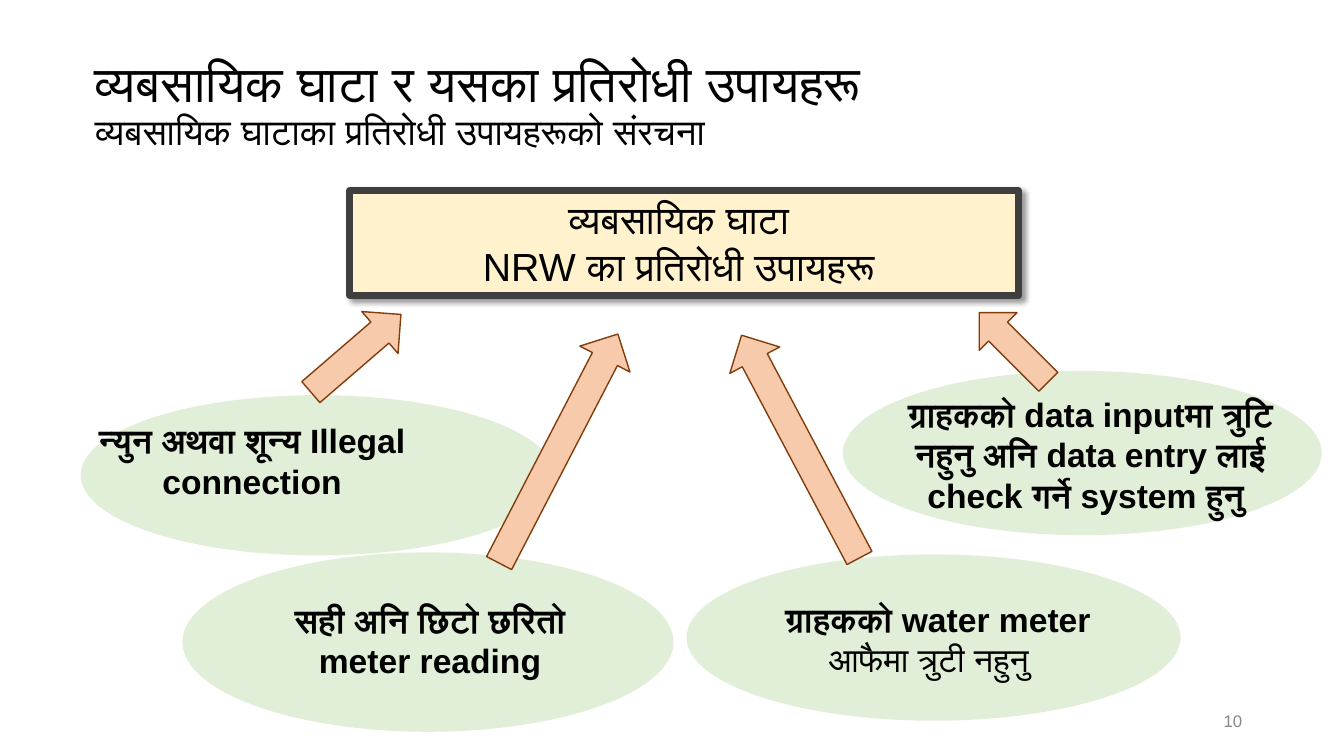
from dataclasses import dataclass
from typing import Any

import lxml.etree
import pptx
import pptx.dml.color
import pptx.enum.shapes
import pptx.enum.text
import pptx.oxml.ns
import pptx.util

Inches = pptx.util.Inches
Pt = pptx.util.Pt
RGBColor = pptx.dml.color.RGBColor
Shapes = pptx.enum.shapes.MSO_SHAPE
Align = pptx.enum.text.PP_ALIGN
Anchor = pptx.enum.text.MSO_ANCHOR
AutoSize = pptx.enum.text.MSO_AUTO_SIZE
qn = pptx.oxml.ns.qn

BLACK = RGBColor(0x00, 0x00, 0x00)
GREY = RGBColor(0x88, 0x88, 0x88)
GREEN = RGBColor(0xE1, 0xEF, 0xD8)
CREAM = RGBColor(0xFF, 0xF2, 0xCC)
CHARCOAL = RGBColor(0x3F, 0x3F, 0x3F)
PEACH = RGBColor(0xF7, 0xCA, 0xAC)
BROWN = RGBColor(0x83, 0x3C, 0x0B)
FONT = "Arial"

Box = tuple[float, float, float, float]


@dataclass(frozen=True)
class Line:
    text: str
    bold: bool = False


@dataclass(frozen=True)
class Measure:
    ellipse: Box
    label: Box
    lines: tuple[Line, ...]


@dataclass(frozen=True)
class Arrow:
    box: Box
    rotation: float


MEASURES = (
    Measure((6.81, 5.5, 4.9, 1.65), (7.11, 5.89, 4.29, 0.91),
            (Line(" ग्राहकको water meter", True), Line("आफैमा त्रुटी नहुनु "))),
    Measure((1.81, 5.48, 4.87, 1.78), (2.35, 5.9, 3.83, 0.91),
            (Line("सही अनि छिटो छरितो meter reading", True),)),
    Measure((0.8, 3.92, 4.7, 1.59), (0.65, 4.12, 3.7, 0.91),
            (Line("न्युन अथवा शून्य Illegal connection", True),)),
    Measure((8.36, 3.68, 4.75, 1.63), (8.76, 3.86, 4.11, 1.31),
            (Line("ग्राहकको data inputमा त्रुटि नहुनु अनि data entry लाई "
                  "check गर्ने system हुनु ", True),)),
)

ARROWS = (
    Arrow((2.94, 3.23, 1.18, 0.55), 319.2),
    Arrow((9.57, 3.18, 0.97, 0.53), 225),
    Arrow((4.26, 4.17, 2.56, 0.56), 297.4),
    Arrow((6.69, 4.15, 2.5, 0.56), 242.1),
)


def apply(target: Any, values: dict[str, Any]) -> None:
    for key, value in values.items():
        setattr(target, key, value)


def place(box: Box) -> list[int]:
    return [Inches(length) for length in box]


def style_run(run: Any, size: float, color: RGBColor = BLACK, bold: bool = False) -> None:
    apply(run.font, {"name": FONT, "size": Pt(size), "bold": bold})
    run.font.color.rgb = color
    complex_script = lxml.etree.SubElement(run.font._element, qn("a:cs"))
    complex_script.set("typeface", FONT)


def write(frame: Any, lines: tuple[Line, ...], size: float, color: RGBColor = BLACK,
          alignment: Any = Align.CENTER, anchor: Any = Anchor.TOP,
          auto_size: Any = AutoSize.SHAPE_TO_FIT_TEXT) -> None:
    apply(frame, {"word_wrap": True, "vertical_anchor": anchor, "auto_size": auto_size})
    for index, line in enumerate(lines):
        paragraph = frame.add_paragraph() if index else frame.paragraphs[0]
        paragraph.alignment = alignment
        run = paragraph.add_run()
        run.text = line.text
        style_run(run, size, color, line.bold)


def draw(slide: Any, kind: Any, box: Box, fill: RGBColor,
         line: RGBColor | None = None, width: float = 1) -> Any:
    shape = slide.shapes.add_shape(kind, *place(box))
    shape.shadow.inherit = False
    shape.fill.solid()
    shape.fill.fore_color.rgb = fill
    if line is None:
        shape.line.fill.background()
    else:
        shape.line.color.rgb = line
        shape.line.width = Pt(width)
    return shape


def add_title(slide: Any) -> None:
    title = slide.shapes.title
    apply(title, dict(zip(("left", "top", "width", "height"),
                          place((0.84, 0.26, 12.03, 1.59)))))
    apply(title.text_frame, {"word_wrap": True, "vertical_anchor": Anchor.MIDDLE,
                             "auto_size": AutoSize.NONE})
    paragraph = title.text_frame.paragraphs[0]
    apply(paragraph, {"alignment": Align.LEFT, "line_spacing": 0.9})
    heading = paragraph.add_run()
    heading.text = "व्यबसायिक घाटा र यसका प्रतिरोधी उपायहरू "
    style_run(heading, 36)
    paragraph.add_line_break()
    subheading = paragraph.add_run()
    subheading.text = "व्यबसायिक घाटाका प्रतिरोधी उपायहरूको संरचना"
    style_run(subheading, 26)


def add_goal(slide: Any) -> None:
    goal = draw(slide, Shapes.RECTANGLE, (3.47, 1.89, 6.63, 1.04), CREAM, CHARCOAL, 5)
    lxml.etree.SubElement(goal.line._get_or_add_ln(), qn("a:round"))
    effects = goal._element.spPr.find(qn("a:effectLst"))
    shadow = lxml.etree.SubElement(effects, qn("a:outerShdw"), {
        "blurRad": str(Pt(4)), "dist": str(Pt(3)), "dir": str(45 * 60000),
        "algn": "tl", "rotWithShape": "0"})
    tint = lxml.etree.SubElement(shadow, qn("a:srgbClr"), val=str(BLACK))
    lxml.etree.SubElement(tint, qn("a:alpha"), val="40000")
    write(goal.text_frame,
          (Line("व्यबसायिक घाटा "), Line("NRW का प्रतिरोधी उपायहरू ")), 28)


def add_measure(slide: Any, measure: Measure) -> None:
    draw(slide, Shapes.OVAL, measure.ellipse, GREEN)
    label = slide.shapes.add_textbox(*place(measure.label))
    write(label.text_frame, measure.lines, 24)


def main() -> None:
    deck = pptx.Presentation()
    apply(deck, {"slide_width": Inches(13.33), "slide_height": Inches(7.5)})
    slide = deck.slides.add_slide(deck.slide_layouts[5])
    add_title(slide)
    for measure in MEASURES:
        add_measure(slide, measure)
    add_goal(slide)
    for arrow in ARROWS:
        pointer = draw(slide, Shapes.RIGHT_ARROW, arrow.box, PEACH, BROWN)
        pointer.rotation = arrow.rotation
    page_number = slide.shapes.add_textbox(*place((9.42, 6.95, 3, 0.4)))
    write(page_number.text_frame, (Line("10"),), 12, GREY, Align.RIGHT,
          Anchor.MIDDLE, AutoSize.NONE)
    deck.save("out.pptx")


if __name__ == "__main__":
    main()
